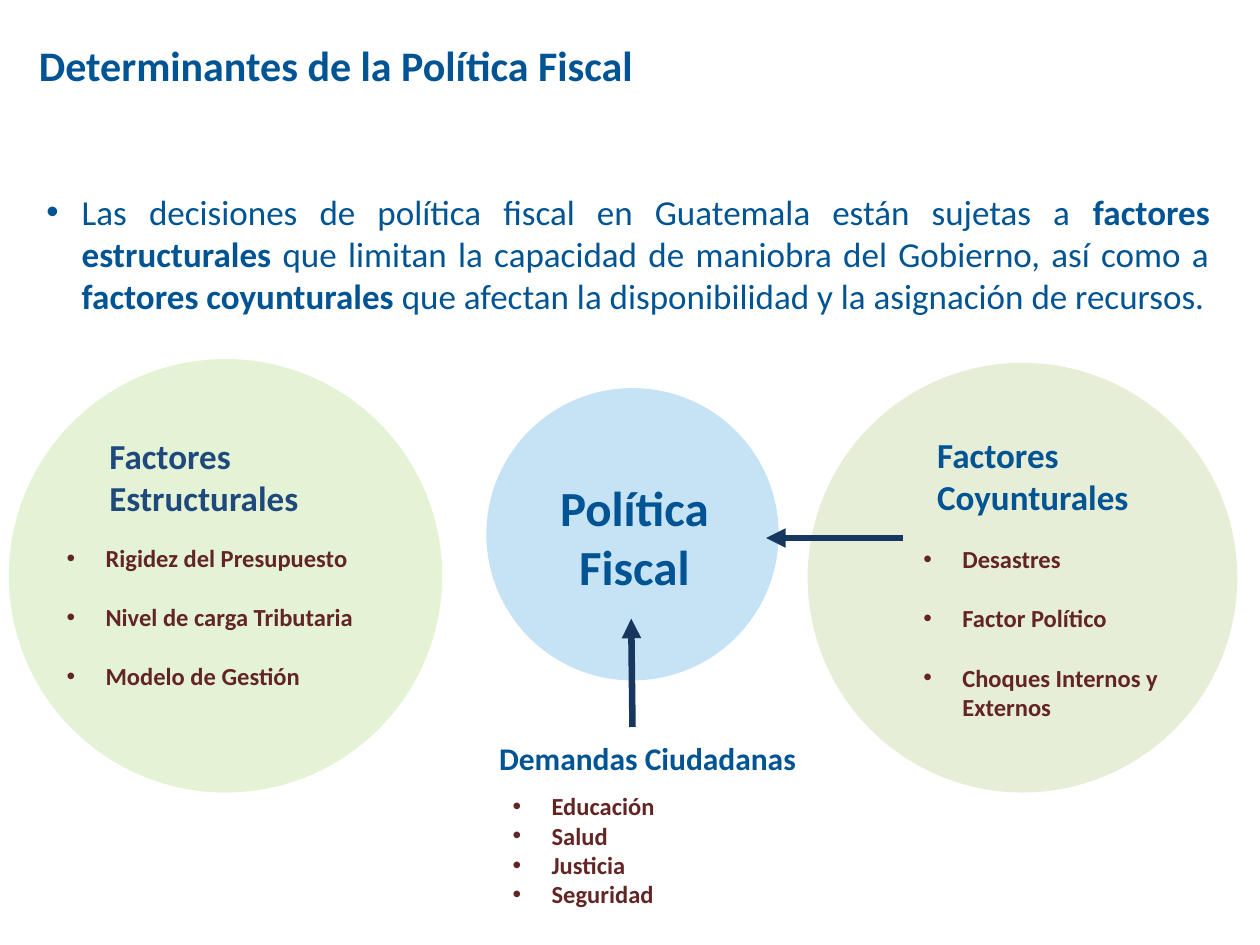
from pptx import Presentation
from pptx.dml.color import RGBColor
from pptx.enum.shapes import MSO_CONNECTOR, MSO_SHAPE
from pptx.enum.text import MSO_ANCHOR, PP_ALIGN
from pptx.oxml.ns import qn
from pptx.util import Inches, Pt
from lxml import etree

OVAL = MSO_SHAPE.OVAL
LINE = MSO_CONNECTOR.STRAIGHT
LEFT, MID, FULL = PP_ALIGN.LEFT, PP_ALIGN.CENTER, PP_ALIGN.JUSTIFY
TOP, CENTER = MSO_ANCHOR.TOP, MSO_ANCHOR.MIDDLE
FONT = "Calibri"
BLUE, NAVY, DARK, WINE = "005493", "1F497D", "17375E", "632523"


def color(text):
    return RGBColor.from_string(text)


def add_sub(parent, tag, **attrs):
    return etree.SubElement(parent, qn(tag), **attrs)


def add_disc(slide, left, top, size, fill):
    disc = slide.shapes.add_shape(
        OVAL, Inches(left), Inches(top), Inches(size), Inches(size))
    disc.shadow.inherit = False
    disc.fill.solid()
    disc.fill.fore_color.rgb = color(fill)
    disc.line.fill.background()
    # Make the fill 24 % opaque
    tint = disc._element.spPr.find(qn("a:solidFill")).find(qn("a:srgbClr"))
    add_sub(tint, "a:alpha", val="24000")


def add_arrow(slide, x1, y1, x2, y2):
    arrow = slide.shapes.add_connector(
        LINE, Inches(x1), Inches(y1), Inches(x2), Inches(y2))
    arrow.line.color.rgb = color(DARK)
    arrow.line.width = Pt(3.75)
    props = arrow._element.spPr
    add_sub(props.find(qn("a:ln")), "a:tailEnd", type="triangle")
    add_sub(props, "a:effectLst")


def add_box(slide, left, top, width, height, anchor=TOP):
    box = slide.shapes.add_textbox(
        Inches(left), Inches(top), Inches(width), Inches(height))
    frame = box.text_frame
    frame.word_wrap = True
    frame.vertical_anchor = anchor
    return frame


def add_para(frame, index):
    return frame.add_paragraph() if index else frame.paragraphs[0]


def set_font(para, size, tone, bold=True):
    font = para.font
    font.name, font.size, font.bold = FONT, Pt(size), bold
    font.color.rgb = color(tone)


def set_bullet(para, margin, hang):
    props = para._p.get_or_add_pPr()
    props.set("marL", str(Inches(margin)))
    props.set("indent", str(-Inches(hang)))
    add_sub(props, "a:buFont", typeface="Arial")
    add_sub(props, "a:buChar", char="•")


def add_label(slide, spot, lines, size, tone=BLUE, align=LEFT, anchor=TOP):
    frame = add_box(slide, *spot, anchor)
    for i, line in enumerate(lines):
        para = add_para(frame, i)
        para.text = line
        para.alignment = align
        set_font(para, size, tone)


def add_list(slide, spot, items, gap=0):
    frame = add_box(slide, *spot)
    for i, item in enumerate(items):
        para = add_para(frame, i)
        para.text = item
        set_bullet(para, 0.31, 0.31)
        if i and gap:
            para.space_before = Pt(gap)
        set_font(para, 14, WINE)


def add_intro(slide, spot, parts):
    para = add_box(slide, *spot).paragraphs[0]
    para.alignment = FULL
    set_bullet(para, 0.3, 0.28)
    set_font(para, 20, BLUE, False)
    for text, bold in parts:
        run = para.add_run()
        run.text = text
        run.font.bold = bold


def main():
    prs = Presentation()
    prs.slide_width, prs.slide_height = Inches(10), Inches(7.5)
    slide = prs.slides.add_slide(prs.slide_layouts[6])

    # Title and statement
    add_label(slide, (0.21, 0, 6.61, 1.03),
              ["Determinantes de la Política Fiscal"], 24, anchor=CENTER)
    add_intro(slide, (0.25, 1.46, 9.45, 1.2), [
        ("Las decisiones de política fiscal en Guatemala están sujetas a ", False),
        ("factores estructurales", True),
        (" que limitan la capacidad de maniobra del Gobierno, así como a ", False),
        ("factores coyunturales ", True),
        ("que afectan la disponibilidad y la asignación de recursos.", False),
    ])

    # Discs
    add_disc(slide, 0.07, 2.85, 3.44, "92D050")
    add_disc(slide, 3.86, 3.08, 2.32, "1286D9")
    add_disc(slide, 6.41, 2.88, 3.41, "9BBB59")

    # Headings
    add_label(slide, (0.77, 3.4, 3.27, 1.11),
              ["Factores", "Estructurales"], 20, NAVY)
    add_label(slide, (4, 3.74, 2.07, 1.04), ["Política Fiscal"], 28, align=MID)
    add_label(slide, (7.34, 3.39, 2.07, 0.77), ["Factores Coyunturales"], 20)
    add_label(slide, (3.8, 5.82, 2.68, 0.4),
              ["Demandas Ciudadanas"], 18, align=MID)

    # Lists of factors
    add_list(slide, (0.43, 4.26, 2.73, 1.28), [
        "Rigidez del Presupuesto", "Nivel de carga Tributaria",
        "Modelo de Gestión"], 17)
    add_list(slide, (7.23, 4.27, 2.73, 1.51), [
        "Desastres", "Factor Político", "Choques Internos y Externos"], 17)
    add_list(slide, (3.97, 6.23, 2.73, 1.28),
             ["Educación", "Salud", "Justicia", "Seguridad"])

    # Arrows to the centre
    add_arrow(slide, 7.17, 4.27, 6.08, 4.27)
    add_arrow(slide, 5.02, 5.77, 5.01, 4.91)

    prs.save("out.pptx")


if __name__ == "__main__":
    main()
